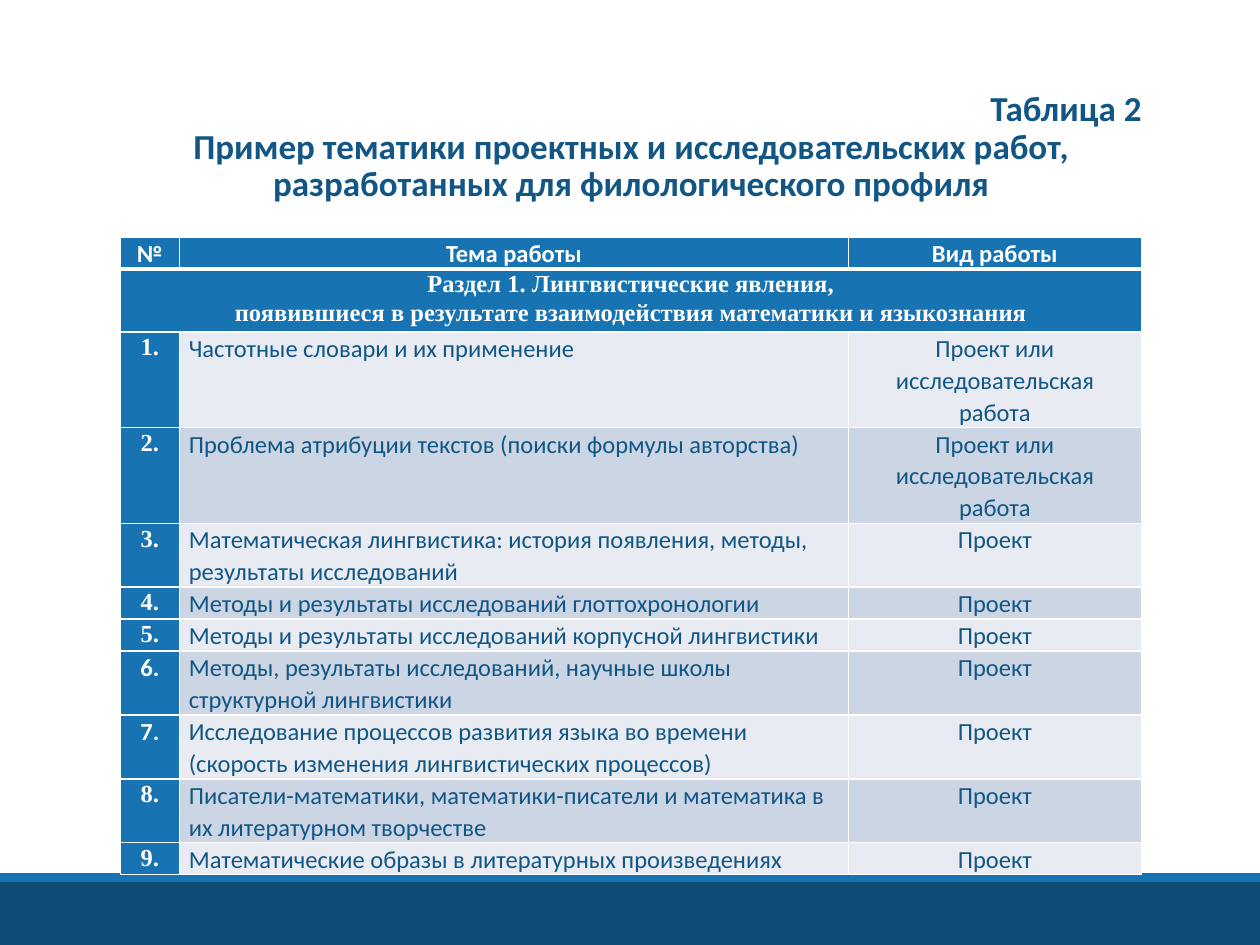
"""Build a slide with a table of project topics for the philological profile."""
from lxml.etree import SubElement
from pptx import Presentation
from pptx.dml.color import RGBColor
from pptx.enum.shapes import MSO_SHAPE
from pptx.enum.text import MSO_ANCHOR, PP_ALIGN
from pptx.oxml import parse_xml
from pptx.oxml.ns import nsdecls, qn
from pptx.util import Pt

WHITE = RGBColor(0xFF, 0xFF, 0xFF)
NAVY = RGBColor(0x0F, 0x4C, 0x76)
BLUE = RGBColor(0x17, 0x73, 0xB1)
INK = RGBColor(0x11, 0x56, 0x85)
LIGHT = RGBColor(0xE8, 0xEB, 0xF2)
DARK = RGBColor(0xCC, 0xD5, 0xE4)
SANS, SERIF = "Calibri", "Times New Roman"

TITLE = [
    ("Таблица 2", PP_ALIGN.RIGHT),
    ("Пример тематики проектных и исследовательских работ, "
     "разработанных для филологического профиля", PP_ALIGN.CENTER),
]
BANDS = [(504, 36, NAVY), (499, 5, BLUE)]
HEADERS = ["№", "Тема работы", "Вид работы"]
SECTION = ["Раздел 1. Лингвистические явления,",
           "появившиеся в результате взаимодействия математики и языкознания"]
PROJECT, EITHER = "Проект", "Проект или исследовательская работа"
TOPICS = [
    ("Частотные словари и их применение", EITHER, 2, SERIF),
    ("Проблема атрибуции текстов (поиски формулы авторства)", EITHER, 2, SERIF),
    ("Математическая лингвистика: история появления, методы, результаты исследований",
     PROJECT, 2, SERIF),
    ("Методы и результаты исследований глоттохронологии", PROJECT, 1, SERIF),
    ("Методы и результаты исследований корпусной лингвистики", PROJECT, 1, SERIF),
    ("Методы, результаты исследований, научные школы структурной лингвистики",
     PROJECT, 2, SANS),
    ("Исследование процессов развития языка во времени "
     "(скорость изменения лингвистических процессов)", PROJECT, 2, SANS),
    ("Писатели-математики, математики-писатели и математика в их литературном творчестве",
     PROJECT, 2, SERIF),
    ("Математические образы в литературных произведениях", PROJECT, 1, SERIF),
]
COLUMN_WIDTHS = [33.8, 382.3, 167.5]
LINE_HEIGHT = 18


def write(para, text, size=14, font=SANS, color=WHITE, bold=True,
          align=PP_ALIGN.CENTER, spacing=1.07):
    para.alignment = align
    para.line_spacing = spacing
    para.space_before = para.space_after = Pt(0)
    span = para.add_run()
    span.text = text
    span.font.size = Pt(size)
    span.font.name = font
    span.font.bold = bold
    span.font.color.rgb = color


def fill_cell(cell, lines, fill, bottom=1, **style):
    cell.margin_left = cell.margin_right = Pt(5.4)
    cell.margin_top = cell.margin_bottom = Pt(0)
    cell.vertical_anchor = MSO_ANCHOR.TOP
    cell.fill.solid()
    cell.fill.fore_color.rgb = fill
    properties = cell._tc.get_or_add_tcPr()
    for index, side in enumerate("LRTB"):
        width = Pt(bottom if side == "B" else 1)
        border = parse_xml(f'<a:ln{side} {nsdecls("a")} w="{width}"/>')
        solid = SubElement(border, qn("a:solidFill"))
        SubElement(solid, qn("a:srgbClr"), val=str(WHITE))
        properties.insert(index, border)
    frame = cell.text_frame
    for index, line in enumerate(lines):
        para = frame.add_paragraph() if index else frame.paragraphs[0]
        write(para, line, **style)


def add_bands(page, width):
    for top, height, color in BANDS:
        band = page.shapes.add_shape(MSO_SHAPE.RECTANGLE, 0, Pt(top), width, Pt(height))
        band.shadow.inherit = False
        band.fill.solid()
        band.fill.fore_color.rgb = color
        band.line.fill.background()


def add_title(page):
    title = page.shapes.title
    title.left, title.top, title.width, title.height = Pt(62), Pt(46.3), Pt(597.6), Pt(76.3)
    frame = title.text_frame
    frame.word_wrap = True
    frame.vertical_anchor = MSO_ANCHOR.MIDDLE
    for index, (text, align) in enumerate(TITLE):
        para = frame.add_paragraph() if index else frame.paragraphs[0]
        write(para, text, size=20, color=INK, align=align, spacing=0.9)


def add_topics(page):
    line_counts = [1, 2] + [topic[2] for topic in TOPICS]
    table = page.shapes.add_table(
        len(line_counts), len(COLUMN_WIDTHS), Pt(68.7), Pt(135.4),
        Pt(sum(COLUMN_WIDTHS)), Pt(LINE_HEIGHT * sum(line_counts))).table
    table.horz_banding = False
    for column, width in zip(table.columns, COLUMN_WIDTHS):
        column.width = Pt(width)
    for row, count in zip(table.rows, line_counts):
        row.height = Pt(LINE_HEIGHT * count)
    for column, header in enumerate(HEADERS):
        fill_cell(table.cell(0, column), [header], BLUE, bottom=3)
        fill_cell(table.cell(1, column), [] if column else SECTION, BLUE, font=SERIF)
    table.cell(1, 0).merge(table.cell(1, len(HEADERS) - 1))
    for number, (topic, kind, _, font) in enumerate(TOPICS, 1):
        row = number + 1
        fill = LIGHT if number % 2 else DARK
        fill_cell(table.cell(row, 0), [f"{number}."], BLUE, font=font)
        fill_cell(table.cell(row, 1), [topic], fill, color=INK, bold=False,
                  align=PP_ALIGN.LEFT)
        fill_cell(table.cell(row, 2), [kind], fill, color=INK, bold=False)


def main():
    deck = Presentation()
    deck.slide_width, deck.slide_height = Pt(720), Pt(540)
    page = deck.slides.add_slide(deck.slide_layouts[5])
    add_bands(page, deck.slide_width)
    add_title(page)
    add_topics(page)
    deck.save("out.pptx")


if __name__ == "__main__":
    main()
